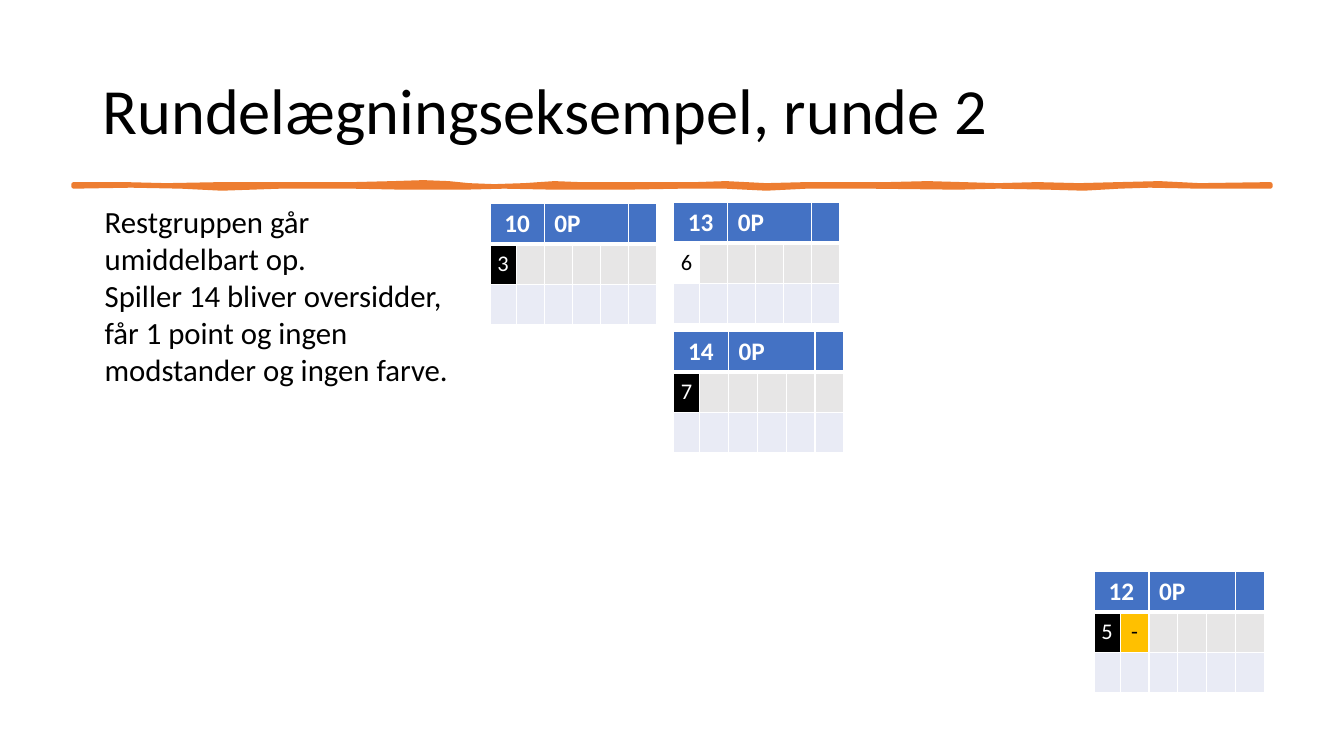
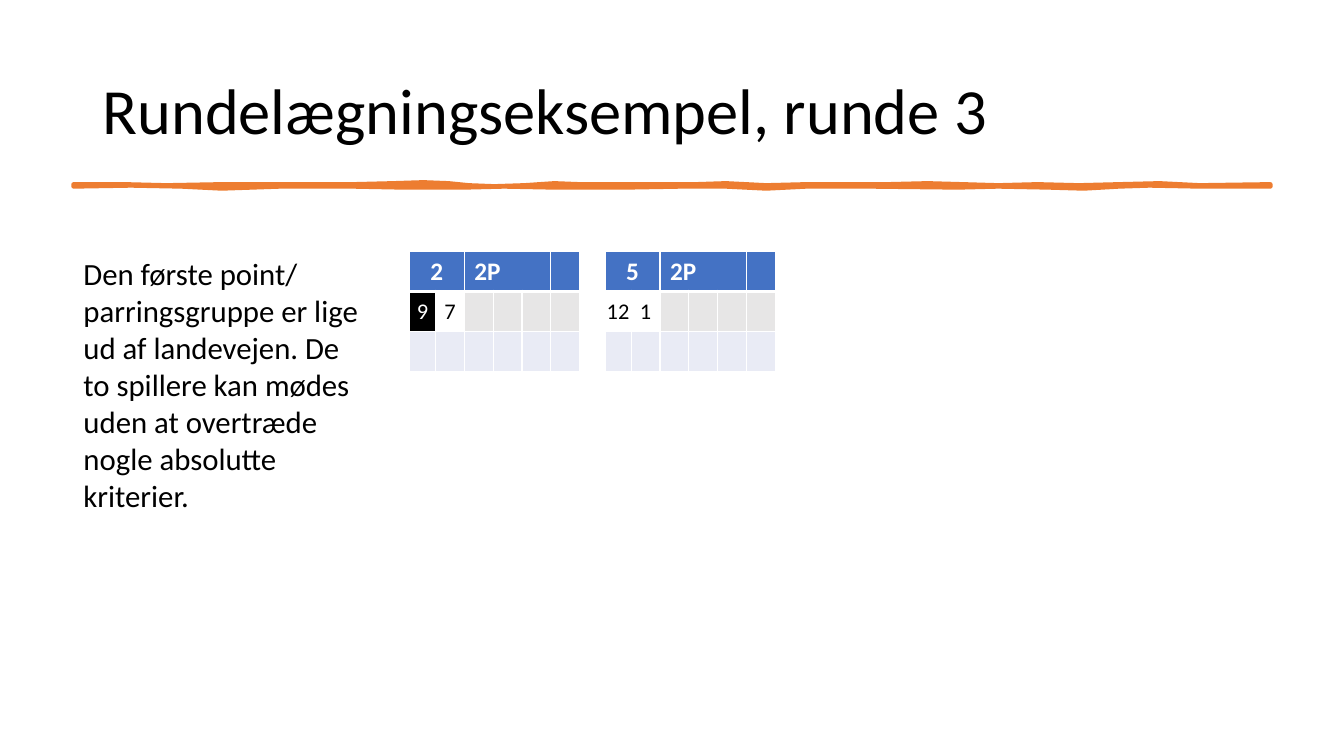
import pptx
import pptx.dml.color
import pptx.enum.text
import pptx.oxml
import pptx.oxml.ns
import pptx.util

Inches = pptx.util.Inches
Pt = pptx.util.Pt
ALIGN = pptx.enum.text.PP_ALIGN
ANCHOR = pptx.enum.text.MSO_ANCHOR

FONT = "Calibri"
BLACK, WHITE = "000000", "FFFFFF"
ACCENT, HEADER = "ED7D31", "4472C4"
UNPLAYED, LOWER_ROW, BYE = "E7E6E6", "E9EBF5", "FFC000"
ROW_HEIGHT, FIRST_COLUMN, COLUMN_COUNT = 0.4, 0.26, 6
NARROW, WIDE = 1.65, 1.69

BRUSH_EDGE = [
    (0.73, 1.83), (1.24, 1.83), (1.65, 1.84), (2.2, 1.83), (2.84, 1.83),
    (3.5, 1.83), (3.9, 1.82), (4.2, 1.81), (4.45, 1.82), (4.65, 1.84),
    (4.9, 1.85), (5.2, 1.84), (5.5, 1.82), (5.75, 1.83), (6.45, 1.83),
    (6.9, 1.83), (7.2, 1.82), (7.6, 1.84), (8.0, 1.83), (8.4, 1.83),
    (8.8, 1.83), (9.2, 1.82), (9.55, 1.83), (9.9, 1.84), (10.29, 1.83),
    (10.7, 1.84), (11.1, 1.83), (11.5, 1.82), (11.9, 1.84), (12.6, 1.83),
    (12.6, 1.85), (11.9, 1.85), (11.4, 1.84), (11.1, 1.85), (10.75, 1.87),
    (10.4, 1.86), (9.9, 1.85), (9.5, 1.86), (8.63, 1.85), (8.0, 1.85),
    (7.6, 1.87), (7.2, 1.85), (6.76, 1.85), (6.2, 1.86), (5.5, 1.86),
    (5.0, 1.85), (4.6, 1.86), (4.0, 1.86), (3.5, 1.85), (2.78, 1.85),
    (2.2, 1.87), (1.8, 1.85), (1.3, 1.84), (0.73, 1.85),
]


def color(value):
    """Return the colour of a hex string."""
    return pptx.dml.color.RGBColor.from_string(value)


def set_fill(target, value):
    """Give a shape or cell a solid fill."""
    target.fill.solid()
    target.fill.fore_color.rgb = color(value)


def style_paragraph(paragraph, size, value=BLACK, bold=False, alignment=ALIGN.LEFT):
    """Set the font and alignment of a paragraph."""
    paragraph.alignment = alignment
    paragraph.font.name = FONT
    paragraph.font.size = Pt(size)
    paragraph.font.bold = bold
    paragraph.font.color.rgb = color(value)


def add_text(slide, box, lines, size, anchor=ANCHOR.TOP, spacing=1.0):
    """Add a wrapped text box with one paragraph per line."""
    frame = slide.shapes.add_textbox(*map(Inches, box)).text_frame
    frame.word_wrap = True
    frame.vertical_anchor = anchor
    frame.text = "\n".join(lines)
    for paragraph in frame.paragraphs:
        style_paragraph(paragraph, size)
        paragraph.line_spacing = spacing


def add_brush_line(slide):
    """Draw the uneven stroke below the title."""
    points = [(Inches(x), Inches(y)) for x, y in BRUSH_EDGE]
    builder = slide.shapes.build_freeform(*points[0])
    builder.add_line_segments(points[1:], close=True)
    stroke = builder.convert_to_shape()
    stroke.shadow.inherit = False
    set_fill(stroke, ACCENT)
    stroke.line.color.rgb = color(ACCENT)
    stroke.line.width = Pt(3.25)
    outline = stroke._element.spPr.find(pptx.oxml.ns.qn("a:ln"))
    outline.append(pptx.oxml.parse_xml(f"<a:round {pptx.oxml.ns.nsdecls('a')}/>"))


def set_borders(cell, top=1, bottom=1):
    """Draw white borders around a cell."""
    properties = cell._tc.get_or_add_tcPr()
    sides = {"L": 1, "R": 1, "T": top, "B": bottom}
    for index, (side, width) in enumerate(sides.items()):
        properties.insert(index, pptx.oxml.parse_xml(
            f'<a:ln{side} {pptx.oxml.ns.nsdecls("a")} w="{Pt(width)}"><a:solidFill>'
            f'<a:srgbClr val="{WHITE}"/></a:solidFill></a:ln{side}>'))


def fill_header(table, player, points):
    """Merge and fill the header row of a player card."""
    table.cell(0, 0).merge(table.cell(0, 1))
    table.cell(0, 2).merge(table.cell(0, 4))
    for column in range(COLUMN_COUNT):
        cell = table.cell(0, column)
        set_fill(cell, HEADER)
        set_borders(cell, bottom=3)
    for column, text, alignment in ((0, player, ALIGN.CENTER), (2, points, ALIGN.LEFT)):
        cell = table.cell(0, column)
        cell.text = text
        cell.vertical_anchor = ANCHOR.MIDDLE
        style_paragraph(cell.text_frame.paragraphs[0], 18, WHITE, True, alignment)


def add_player_card(slide, left, top, width, player, points, rounds):
    """Add a player's table with the opponents met so far."""
    table = slide.shapes.add_table(
        3, COLUMN_COUNT, Inches(left), Inches(top), Inches(width), Inches(3 * ROW_HEIGHT)).table
    table.horz_banding = False
    for row in table.rows:
        row.height = Inches(ROW_HEIGHT)
    for index, column in enumerate(table.columns):
        column.width = Inches((width - FIRST_COLUMN) / (COLUMN_COUNT - 1) if index else FIRST_COLUMN)
    fill_header(table, player, points)
    blank = ("", UNPLAYED)
    played = rounds + [blank] * (COLUMN_COUNT - len(rounds))
    for row, entries in ((1, played), (2, [("", LOWER_ROW)] * COLUMN_COUNT)):
        for column, (text, background) in enumerate(entries):
            cell = table.cell(row, column)
            cell.text = text
            cell.vertical_anchor = ANCHOR.MIDDLE
            cell.margin_left = cell.margin_right = cell.margin_top = cell.margin_bottom = 0
            set_fill(cell, background)
            set_borders(cell, top=3 if row == 1 else 1)
            style_paragraph(cell.text_frame.paragraphs[0], 16,
                            WHITE if background == BLACK else BLACK, alignment=ALIGN.CENTER)


def add_round_slide(presentation, number, text_box, lines, cards):
    """Add a slide with title, stroke, explanation and player cards."""
    slide = presentation.slides.add_slide(presentation.slide_layouts[6])
    add_text(slide, (0.92, 0.4, 11.5, 1.45), [f"Rundelægningseksempel, runde {number}"],
             46, ANCHOR.MIDDLE, 0.9)
    add_brush_line(slide)
    for card in cards:
        add_player_card(slide, *card)
    add_text(slide, text_box, lines, 22)


def main():
    """Build and save the presentation."""
    presentation = pptx.Presentation()
    presentation.slide_width = Inches(13.33)
    presentation.slide_height = Inches(7.5)
    add_round_slide(
        presentation, 2, (0.94, 1.96, 3.77, 2.36),
        ["Restgruppen går umiddelbart op.",
         "Spiller 14 bliver oversidder, får 1 point og ingen modstander og ingen farve."],
        [(4.86, 2.02, NARROW, "10", "0P", [("3", BLACK)]),
         (10.85, 5.67, WIDE, "12", "0P", [("5", BLACK), ("-", BYE)]),
         (6.68, 2.01, NARROW, "13", "0P", [("6", WHITE)]),
         (6.68, 3.29, WIDE, "14", "0P", [("7", BLACK)])])
    add_round_slide(
        presentation, 3, (0.73, 2.48, 3, 2.71),
        ["Den første point/ parringsgruppe er lige ud af landevejen. De to spillere kan "
         "mødes uden at overtræde nogle absolutte kriterier."],
        [(4.06, 2.49, WIDE, "2", "2P", [("9", BLACK), ("7", WHITE)]),
         (6, 2.49, WIDE, "5", "2P", [("12", WHITE), ("1", WHITE)])])
    presentation.save("out.pptx")


if __name__ == "__main__":
    main()
